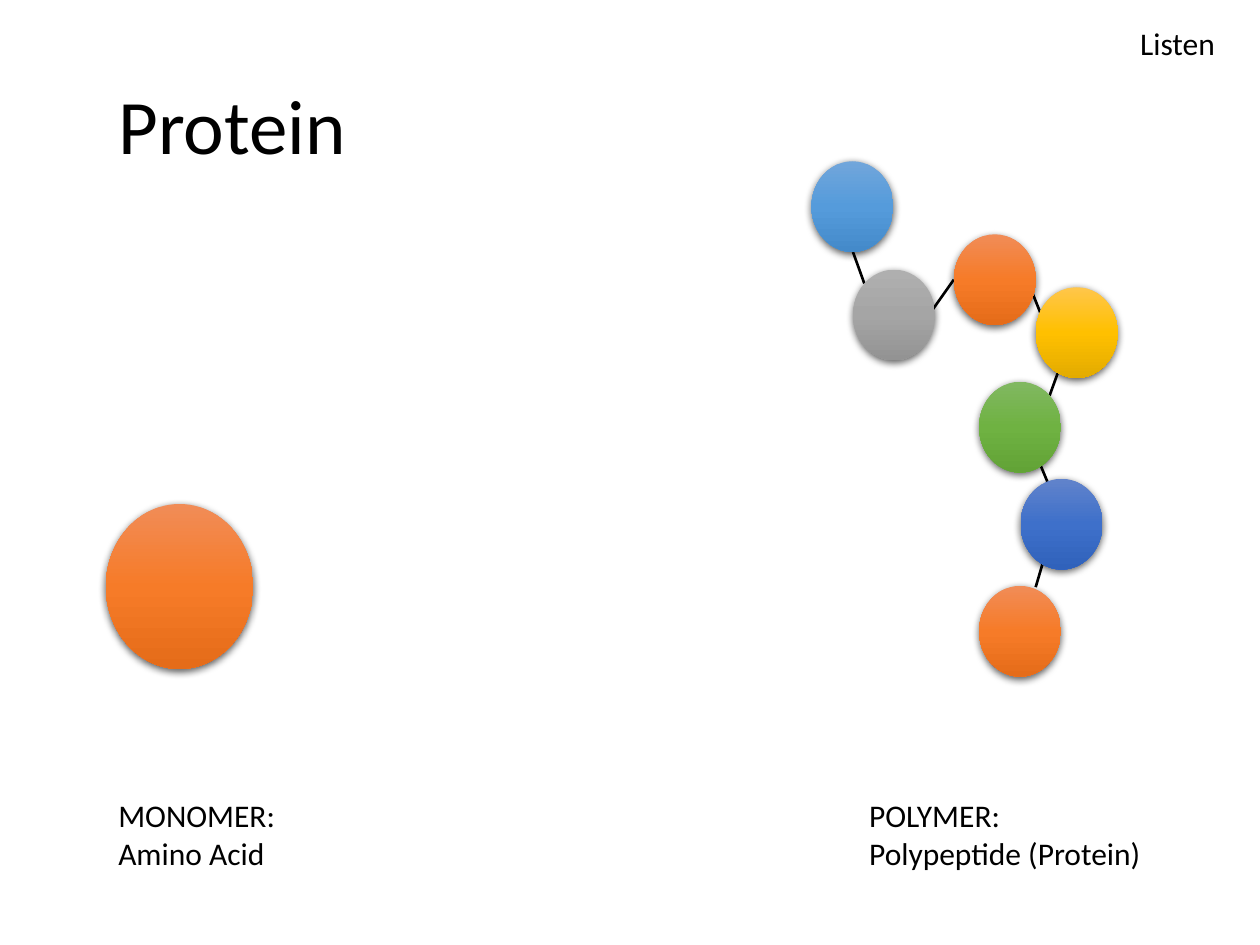
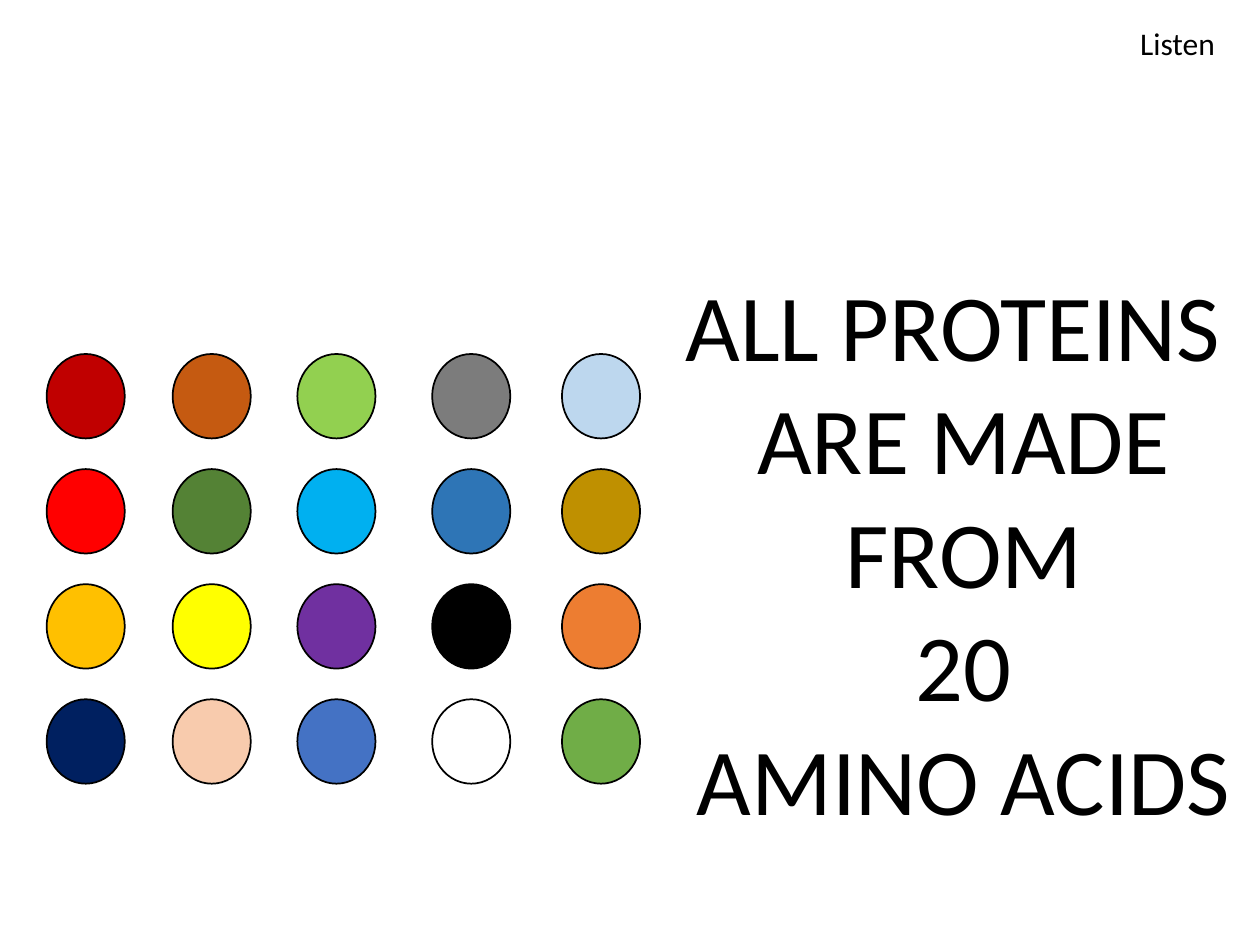
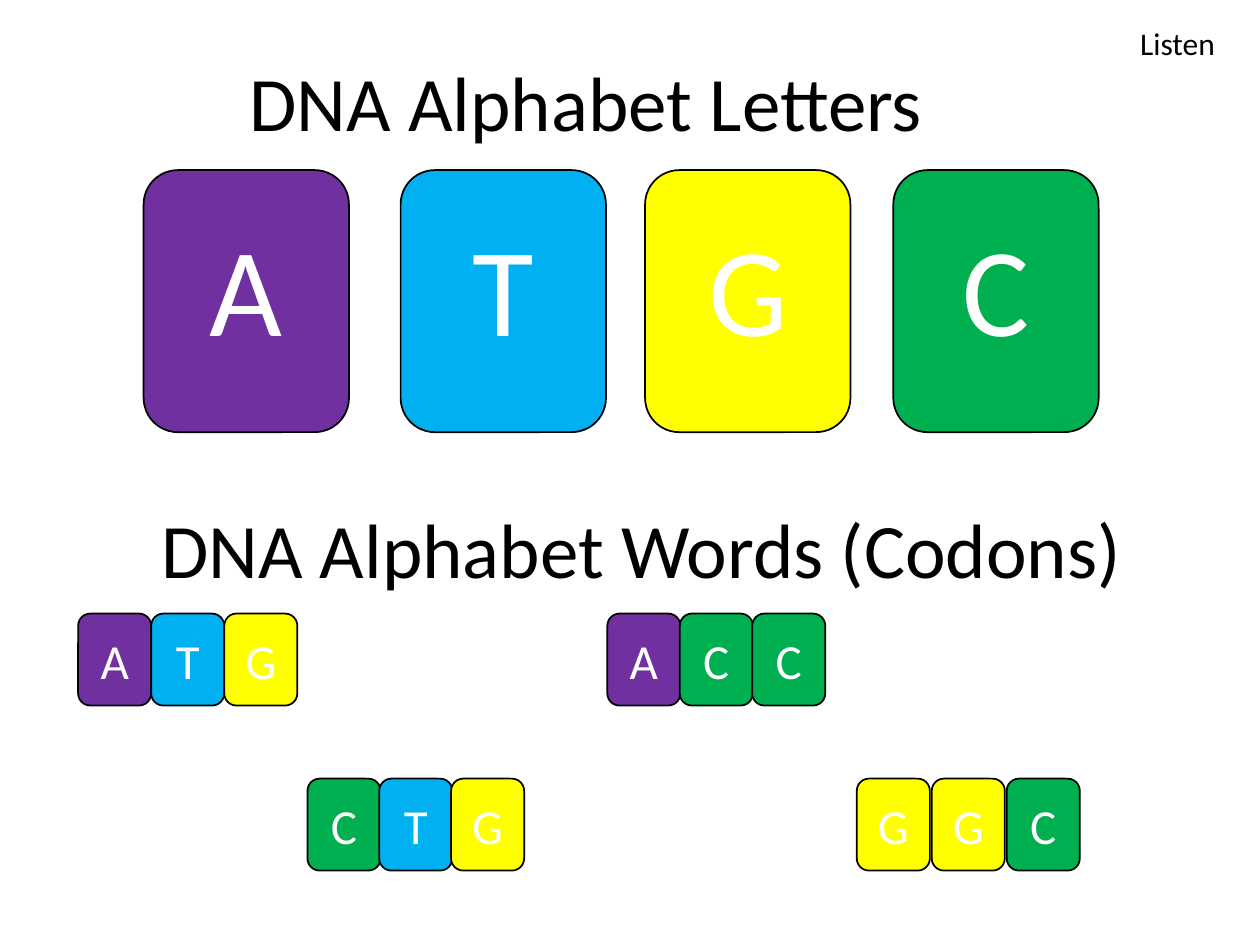
from copy import deepcopy
from dataclasses import dataclass

from lxml import etree
from pptx import Presentation
from pptx import util as u
from pptx.dml.color import RGBColor
from pptx.enum import shapes, text
from pptx.oxml.ns import qn

SLIDE_WIDTH, SLIDE_HEIGHT = u.Inches(10), u.Inches(7.5)
COLUMN, ROW = SLIDE_WIDTH / 100, SLIDE_HEIGHT / 75
TITLE_ONLY, BLANK = 5, 6
FONT = "Calibri"
TITLE_SIZE, BODY_SIZE = 44, 18

BLACK = RGBColor(0x00, 0x00, 0x00)
WHITE = RGBColor(0xFF, 0xFF, 0xFF)
PURPLE = RGBColor(0x70, 0x30, 0xA0)
SKY = RGBColor(0x00, 0xB0, 0xF0)
YELLOW = RGBColor(0xFF, 0xFF, 0x00)
GREEN = RGBColor(0x00, 0xB0, 0x50)
DARK_RED = RGBColor(0xC0, 0x00, 0x00)
RED = RGBColor(0xFF, 0x00, 0x00)
AMBER = RGBColor(0xFF, 0xC0, 0x00)
NAVY = RGBColor(0x00, 0x20, 0x60)
BROWN = RGBColor(0xC5, 0x5A, 0x11)
FOREST = RGBColor(0x54, 0x82, 0x35)
PEACH = RGBColor(0xF8, 0xCB, 0xAD)
LIME = RGBColor(0x92, 0xD0, 0x50)
BLUE = RGBColor(0x44, 0x72, 0xC4)
GRAY = RGBColor(0x7C, 0x7C, 0x7C)
STEEL = RGBColor(0x2E, 0x75, 0xB6)
PALE_BLUE = RGBColor(0xBD, 0xD7, 0xEE)
OCHRE = RGBColor(0xBF, 0x90, 0x00)
ORANGE = RGBColor(0xED, 0x7D, 0x31)
LEAF = RGBColor(0x70, 0xAD, 0x47)

ORANGE_BEAD = (RGBColor(0xF1, 0x8C, 0x57), RGBColor(0xF6, 0x7B, 0x28), RGBColor(0xE5, 0x6C, 0x19))
GRAY_BEAD = (RGBColor(0xAF, 0xAF, 0xAF), RGBColor(0xA5, 0xA5, 0xA5), RGBColor(0x93, 0x93, 0x93))
SKY_BEAD = (RGBColor(0x71, 0xA6, 0xDB), RGBColor(0x55, 0x9B, 0xDB), RGBColor(0x44, 0x8A, 0xCA))
AMBER_BEAD = (RGBColor(0xFF, 0xC6, 0x4B), AMBER, RGBColor(0xE3, 0xAB, 0x00))
GREEN_BEAD = (RGBColor(0x81, 0xB8, 0x61), RGBColor(0x6F, 0xB2, 0x42), RGBColor(0x62, 0xA3, 0x36))
BLUE_BEAD = (RGBColor(0x61, 0x83, 0xCB), RGBColor(0x3E, 0x70, 0xCA), RGBColor(0x30, 0x62, 0xBB))

BASE_COLORS = {"A": PURPLE, "T": SKY, "G": YELLOW, "C": GREEN}

CHAIN_BEADS = [
    (0, 0, SKY_BEAD), (3.3, 8.6, GRAY_BEAD), (11.3, 5.8, ORANGE_BEAD), (17.8, 10, AMBER_BEAD),
    (13.3, 17.5, GREEN_BEAD), (16.6, 25.2, BLUE_BEAD), (13.3, 33.7, ORANGE_BEAD),
]
CHAIN_LINKS = [
    (3.3, 7.2, 4.2, 9.7), (9.6, 11.8, 11.3, 9.4), (17.2, 9.6, 18.2, 12.1),
    (19.7, 16.4, 18.9, 18.6), (17.8, 23.2, 18.8, 25.6), (17.8, 33.8, 18.8, 30.4),
]
AMINO_ACID_COLUMNS = [
    (0, (DARK_RED, RED, AMBER, NAVY)),
    (10, (BROWN, FOREST, YELLOW, PEACH)),
    (19.9, (LIME, SKY, PURPLE, BLUE)),
    (30.6, (GRAY, STEEL, BLACK, WHITE)),
    (40.9, (PALE_BLUE, OCHRE, ORANGE, LEAF)),
]


@dataclass
class Box:
    """A region measured in grid columns and rows."""
    left: float
    top: float
    width: float
    height: float

    def inner(self, left, top, width, height):
        """Return a box offset from this one's corner."""
        return Box(self.left + left, self.top + top, width, height)

    def frame(self):
        """Return left, top, width and height as slide lengths."""
        return (u.Emu(round(self.left * COLUMN)), u.Emu(round(self.top * ROW)),
                u.Emu(round(self.width * COLUMN)), u.Emu(round(self.height * ROW)))


def write_lines(text_frame, lines, size, color=BLACK, align=text.PP_ALIGN.LEFT, wrap=True):
    """Fill a text frame with one formatted paragraph per line."""
    text_frame.word_wrap = wrap
    text_frame.auto_size = text.MSO_AUTO_SIZE.NONE
    text_frame.text = "\n".join(lines)
    for paragraph in text_frame.paragraphs:
        paragraph.alignment = align
        for run in paragraph.runs:
            run.font.name, run.font.size = FONT, u.Pt(size)
            run.font.color.rgb = color


def add_text(slide, box, lines, size=BODY_SIZE, **style):
    """Add a text box."""
    write_lines(slide.shapes.add_textbox(*box.frame()).text_frame, lines, size, **style)


def place_title(slide, box, title, anchor=text.MSO_ANCHOR.TOP, spacing=1.0):
    """Move, fill and format the title placeholder."""
    shape = slide.shapes.title
    shape.left, shape.top, shape.width, shape.height = box.frame()
    write_lines(shape.text_frame, [title], TITLE_SIZE)
    shape.text_frame.vertical_anchor = anchor
    shape.text_frame.paragraphs[0].line_spacing = spacing


def add_slide(presentation, layout):
    """Add a slide with the shared corner label."""
    slide = presentation.slides.add_slide(presentation.slide_layouts[layout])
    add_text(slide, Box(89.5, 1.4, 9.5, 4), ["Listen"])
    return slide


def add_outlined(slide, kind, box, color):
    """Add a flat shape with a thin black outline."""
    shape = slide.shapes.add_shape(kind, *box.frame())
    shape.shadow.inherit = False
    shape.fill.solid()
    shape.fill.fore_color.rgb = color
    shape.line.color.rgb, shape.line.width = BLACK, u.Pt(1)
    return shape


def add_bead(slide, box, colors):
    """Add a shaded ball with a soft shadow below it."""
    shape = slide.shapes.add_shape(shapes.MSO_SHAPE.OVAL, *box.frame())
    shape.line.fill.background()
    shape.fill.gradient()
    shape.fill.gradient_angle = 270
    properties = shape._element.spPr
    stop_list = properties.find(".//" + qn("a:gsLst"))
    stop_list.insert(1, deepcopy(stop_list[0]))
    for stop, position, color in zip(shape.fill.gradient_stops, (0, 0.5, 1), colors):
        stop.position, stop.color.rgb = position, color
    shape.shadow.inherit = False
    shadow = etree.SubElement(
        properties.find(qn("a:effectLst")), qn("a:outerShdw"),
        blurRad=str(u.Pt(4.5)), dist=str(u.Pt(1.5)), dir="5400000", rotWithShape="0")
    shade = etree.SubElement(shadow, qn("a:srgbClr"), val=str(BLACK))
    etree.SubElement(shade, qn("a:alpha"), val="63000")


def add_link(slide, start, end):
    """Add a black line between two grid points."""
    ends = [u.Emu(round(length)) for x, y in (start, end) for length in (x * COLUMN, y * ROW)]
    line = slide.shapes.add_connector(shapes.MSO_CONNECTOR.STRAIGHT, *ends)
    line.line.color.rgb, line.line.width = BLACK, u.Pt(1.5)
    etree.SubElement(line._element.spPr, qn("a:effectLst"))


def add_chain(slide, box):
    """Draw the polypeptide as linked beads."""
    for x1, y1, x2, y2 in CHAIN_LINKS:
        add_link(slide, (box.left + x1, box.top + y1), (box.left + x2, box.top + y2))
    for left, top, colors in CHAIN_BEADS:
        add_bead(slide, box.inner(left, top, 6.5, 7.2), colors)


def add_amino_acids(slide, box):
    """Draw the twenty amino acids in columns of four."""
    width, height = 6.2, 6.7
    for left, colors in AMINO_ACID_COLUMNS:
        pitch = (box.height - height) / (len(colors) - 1)
        for row, color in enumerate(colors):
            add_outlined(slide, shapes.MSO_SHAPE.OVAL,
                         box.inner(left, row * pitch, width, height), color)


def add_base_card(slide, box, base, size, lift=0.0):
    """Draw one lettered DNA base, its letter raised by a bottom inset."""
    card = add_outlined(slide, shapes.MSO_SHAPE.ROUNDED_RECTANGLE, box, BASE_COLORS[base])
    frame = card.text_frame
    write_lines(frame, [base], size, WHITE, text.PP_ALIGN.CENTER, wrap=False)
    frame.vertical_anchor = text.MSO_ANCHOR.MIDDLE
    frame.margin_left = frame.margin_right = frame.margin_top = 0
    frame.margin_bottom = u.Emu(round(lift * ROW))


def add_alphabet(slide, box):
    """Draw the four large base cards."""
    for left, base in zip((0, 20.4, 39.8, 59.5), "ATGC"):
        add_base_card(slide, box.inner(left, 0, 16.3, box.height), base, 72, lift=2.4)


def add_codon(slide, box, codon):
    """Spread the small cards of one codon over the box."""
    width = 5.8
    pitch = (box.width - width) / (len(codon) - 1)
    for index, base in enumerate(codon):
        add_base_card(slide, box.inner(index * pitch, 0, width, box.height), base, 28)


def build_protein_slide(presentation):
    """Show the monomer beside the polymer."""
    slide = add_slide(presentation, TITLE_ONLY)
    place_title(slide, Box(8.4, 2.1, 79.7, 16.4), "Protein", text.MSO_ANCHOR.MIDDLE, 0.9)
    add_bead(slide, Box(8.4, 40, 11.7, 13.1), ORANGE_BEAD)
    add_chain(slide, Box(64.4, 12.8, 24.3, 40.9))
    add_text(slide, Box(8.4, 62.7, 23.5, 7.1), ["MONOMER:", "Amino Acid"])
    add_text(slide, Box(68, 62.7, 29.6, 7.1), ["POLYMER:", "Polypeptide (Protein)"])


def build_amino_acid_slide(presentation):
    """Show the twenty amino acids and the statement about them."""
    slide = add_slide(presentation, BLANK)
    add_amino_acids(slide, Box(3.7, 28.1, 47.1, 34.1))
    add_text(slide, Box(53, 20.7, 47, 46.4),
             ["ALL PROTEINS ", "ARE MADE\vFROM", "20", "AMINO ACIDS"],
             54, align=text.PP_ALIGN.CENTER, wrap=False)


def build_dna_slide(presentation):
    """Show the DNA letters and the codons they spell."""
    slide = add_slide(presentation, TITLE_ONLY)
    place_title(slide, Box(18.8, 3.8, 64.8, 8.4), "DNA Alphabet Letters")
    add_alphabet(slide, Box(11.4, 13.5, 75.8, 20.8))
    add_text(slide, Box(11.8, 39.3, 78.8, 8.4), ["DNA Alphabet Words (Codons)"], TITLE_SIZE)
    for left, top, width, codon in [(6.2, 48.7, 17.4, "ATG"), (24.4, 61.8, 17.2, "CTG"),
                                    (48.2, 48.7, 17.3, "ACC"), (68, 61.8, 17.7, "GGC")]:
        add_codon(slide, Box(left, top, width, 7.3), codon)


def main():
    """Build the presentation and save it."""
    presentation = Presentation()
    presentation.slide_width, presentation.slide_height = SLIDE_WIDTH, SLIDE_HEIGHT
    build_protein_slide(presentation)
    build_amino_acid_slide(presentation)
    build_dna_slide(presentation)
    presentation.save("out.pptx")


if __name__ == "__main__":
    main()
